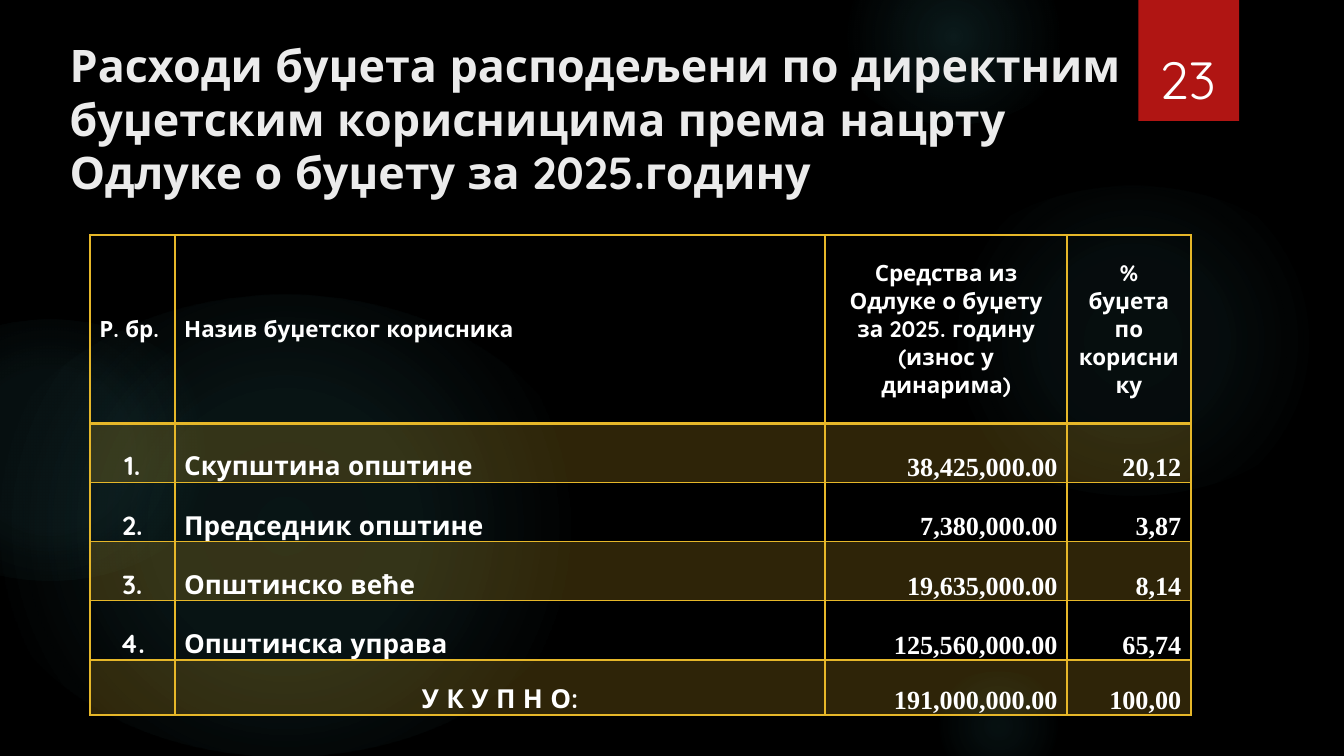
from typing import NamedTuple

import pptx
import pptx.dml.color
import pptx.enum.shapes
import pptx.enum.text
import pptx.oxml
import pptx.oxml.ns
import pptx.util

Inches = pptx.util.Inches
Pt = pptx.util.Pt
SHAPE = pptx.enum.shapes.MSO_SHAPE
ALIGN = pptx.enum.text.PP_ALIGN
ANCHOR = pptx.enum.text.MSO_ANCHOR

NS = pptx.oxml.ns.nsdecls("a")
SANS = "Quicksand"
SERIF = "Times New Roman"
WHITE = "FFFFFF"
GOLD = "E6B729"
TEAL = "50B9C1"


class Glow(NamedTuple):
    left: float
    top: float
    width: float
    height: float
    stops: tuple[tuple[int, int], ...]


class Column(NamedTuple):
    width: float
    header_align: ALIGN
    body_align: ALIGN
    body_font: str


GLOWS = [
    Glow(6.89, 1.38, 3.08, 2.31, ((0, 7), (36, 6), (69, 0))),
    Glow(6.22, -0.38, 1.75, 1.31, ((0, 14), (36, 7), (73, 0))),
    Glow(6.89, 5, 1.08, 0.81, ((0, 9), (36, 5), (66, 0))),
    Glow(-0.17, 2.19, 4.58, 3.44, ((0, 11), (36, 10), (75, 0))),
    Glow(-0.92, 2.38, 2.58, 1.94, ((0, 8), (36, 8), (72, 0))),
]
COLUMNS = [
    Column(0.63, ALIGN.LEFT, ALIGN.CENTER, SANS),
    Column(4.84, ALIGN.LEFT, ALIGN.LEFT, SANS),
    Column(1.8, ALIGN.CENTER, ALIGN.RIGHT, SERIF),
    Column(0.92, ALIGN.CENTER, ALIGN.RIGHT, SERIF),
]
ROW_HEIGHTS = [1.4, 0.44, 0.44, 0.44, 0.44, 0.41]
ROWS = [
    ("Р. бр.", "Назив буџетског корисника",
     "Средства из Одлуке о буџету за 2025. годину (износ у динарима)",
     "%\vбуџета по кориснику"),
    ("1.", "Скупштина општине", "38,425,000.00", "20,12"),
    ("2.", "Председник општине", "7,380,000.00", "3,87"),
    ("3.", "Општинско веће", "19,635,000.00", "8,14"),
    ("4.", "Општинска управа", "125,560,000.00", "65,74"),
    ("", "У К У П Н О:", "191,000,000.00", "100,00"),
]


def rgb(value: str) -> pptx.dml.color.RGBColor:
    return pptx.dml.color.RGBColor.from_string(value)


def style(p, size: float, name: str, color: str, bold: bool, align: ALIGN) -> None:
    p.alignment = align
    p.font.size = Pt(size)
    p.font.name = name
    p.font.bold = bold
    p.font.color.rgb = rgb(color)


def add_glow(slide, glow: Glow) -> None:
    sp = slide.shapes.add_shape(SHAPE.OVAL, Inches(glow.left), Inches(glow.top),
                                Inches(glow.width), Inches(glow.height))
    sp.shadow.inherit = False
    sp.line.fill.background()
    sp.fill.background()
    stops = "".join(
        f'<a:gs pos="{pos * 1000}"><a:srgbClr val="{TEAL}">'
        f'<a:alpha val="{alpha * 1000}"/></a:srgbClr></a:gs>'
        for pos, alpha in glow.stops)
    grad = pptx.oxml.parse_xml(
        f'<a:gradFill {NS} rotWithShape="1"><a:gsLst>{stops}</a:gsLst>'
        '<a:path path="circle">'
        '<a:fillToRect l="50000" t="50000" r="50000" b="50000"/>'
        '</a:path></a:gradFill>')
    sp_pr = sp._element.spPr
    sp_pr.replace(sp_pr.find(pptx.oxml.ns.qn("a:noFill")), grad)


def add_number_tab(slide) -> None:
    sp = slide.shapes.add_shape(SHAPE.RECTANGLE, Inches(8.47), Inches(0),
                                Inches(0.75), Inches(0.9))
    sp.fill.solid()
    sp.fill.fore_color.rgb = rgb("B01513")
    sp.line.fill.background()
    sp._element.spPr.append(pptx.oxml.parse_xml(
        f'<a:effectLst {NS}><a:outerShdw blurRad="{Pt(3)}" dist="{Pt(2)}" '
        'dir="5400000" rotWithShape="0"><a:srgbClr val="000000">'
        '<a:alpha val="45000"/></a:srgbClr></a:outerShdw></a:effectLst>'))


def add_text(slide, left: float, top: float, width: float, height: float, text: str,
             size: float, color: str, bold: bool, align: ALIGN, anchor: ANCHOR) -> None:
    tf = slide.shapes.add_textbox(Inches(left), Inches(top),
                                  Inches(width), Inches(height)).text_frame
    tf.word_wrap = True
    tf.vertical_anchor = anchor
    p = tf.paragraphs[0]
    p.text = text
    style(p, size, SANS, color, bold, align)


def set_borders(cell, top: float, bottom: float) -> None:
    widths = {"lnL": 1, "lnR": 1, "lnT": top, "lnB": bottom}
    for i, (side, width) in enumerate(widths.items()):
        cell._tc.get_or_add_tcPr().insert(i, pptx.oxml.parse_xml(
            f'<a:{side} {NS} w="{Pt(width)}"><a:solidFill>'
            f'<a:srgbClr val="{GOLD}"/></a:solidFill></a:{side}>'))


def fill_cell(cell, row: int, column: Column, text: str) -> None:
    header = row == 0
    cell.margin_left = cell.margin_right = Inches(0.07)
    cell.margin_top = cell.margin_bottom = 0
    cell.vertical_anchor = ANCHOR.MIDDLE if header else ANCHOR.BOTTOM
    p = cell.text_frame.paragraphs[0]
    p.text = text
    align = column.header_align if header else column.body_align
    if text == "У К У П Н О:":
        align = ALIGN.CENTER
    style(p, 12 if header else 14, SANS if header else column.body_font,
          WHITE, True, align)
    if row % 2:
        cell.fill.solid()
        cell.fill.fore_color.rgb = rgb(GOLD)
        color = cell._tc.tcPr.find(".//" + pptx.oxml.ns.qn("a:srgbClr"))
        color.append(pptx.oxml.parse_xml(f'<a:alpha {NS} val="20000"/>'))
    else:
        cell.fill.background()
    set_borders(cell, 2 if row == 1 else 1, 2 if header else 1)


def add_budget_table(slide) -> None:
    table = slide.shapes.add_table(
        len(ROWS), len(COLUMNS), Inches(0.67), Inches(1.75),
        Inches(sum(c.width for c in COLUMNS)), Inches(sum(ROW_HEIGHTS))).table
    table.first_row = table.horz_banding = False
    for i, column in enumerate(COLUMNS):
        table.columns[i].width = Inches(column.width)
    for i, (height, texts) in enumerate(zip(ROW_HEIGHTS, ROWS)):
        table.rows[i].height = Inches(height)
        for j, text in enumerate(texts):
            fill_cell(table.cell(i, j), i, COLUMNS[j], text)


def main() -> None:
    prs = pptx.Presentation()
    prs.slide_width = Inches(10)
    prs.slide_height = Inches(10) * 9 // 16
    slide = prs.slides.add_slide(prs.slide_layouts[6])
    slide.background.fill.solid()
    slide.background.fill.fore_color.rgb = rgb("000000")
    for glow in GLOWS:
        add_glow(slide, glow)
    add_number_tab(slide)
    add_text(slide, 0.42, 0.23, 9, 0.94,
             "Расходи буџета расподељени по директним буџетским корисницима "
             "према нацрту\vОдлуке о буџету за 2025.годину",
             24, "EBEBEB", True, ALIGN.LEFT, ANCHOR.TOP)
    add_budget_table(slide)
    add_text(slide, 8.49, 0.24, 0.69, 0.63, "23", 28, WHITE, False,
             ALIGN.CENTER, ANCHOR.BOTTOM)
    prs.save("out.pptx")


if __name__ == "__main__":
    main()
